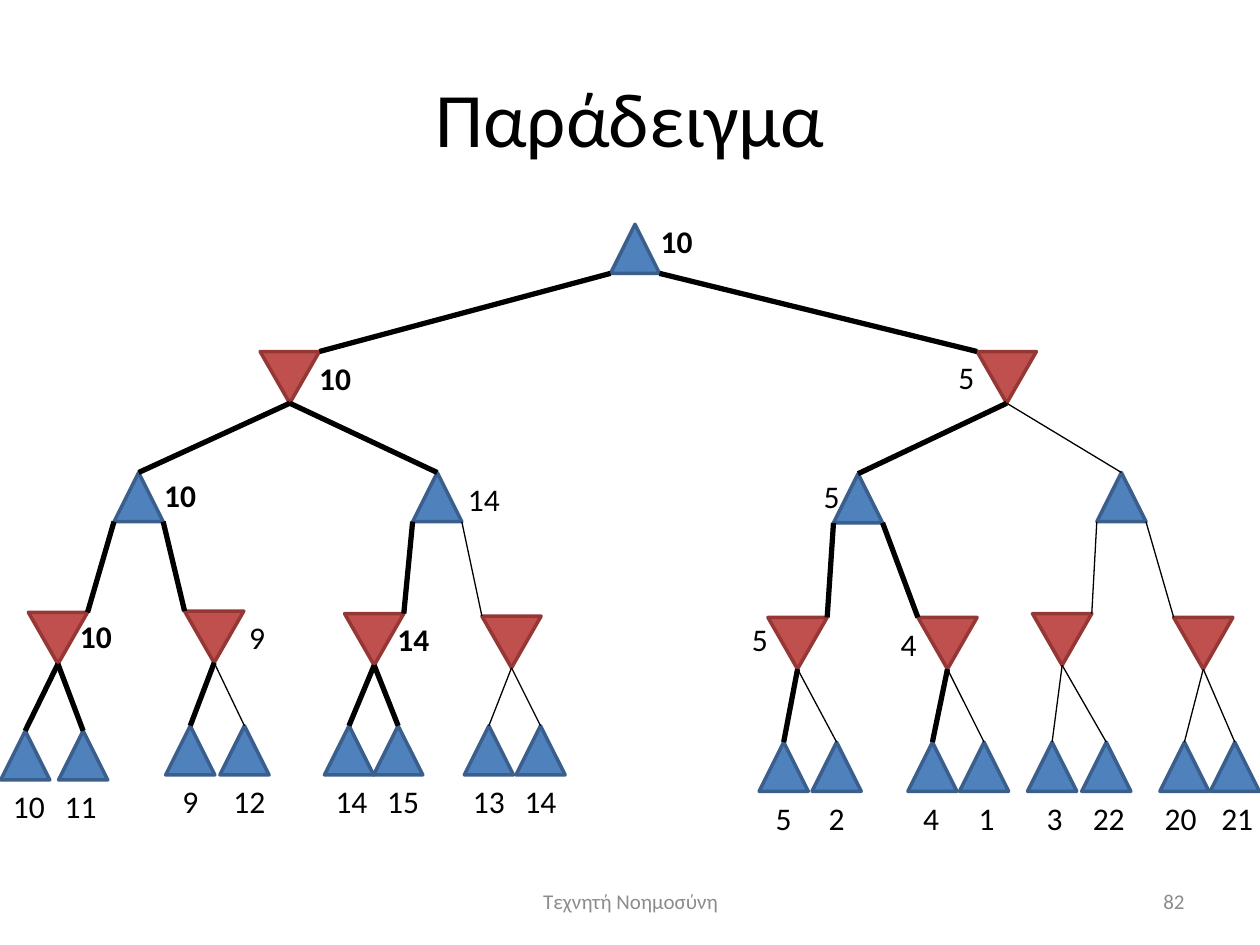
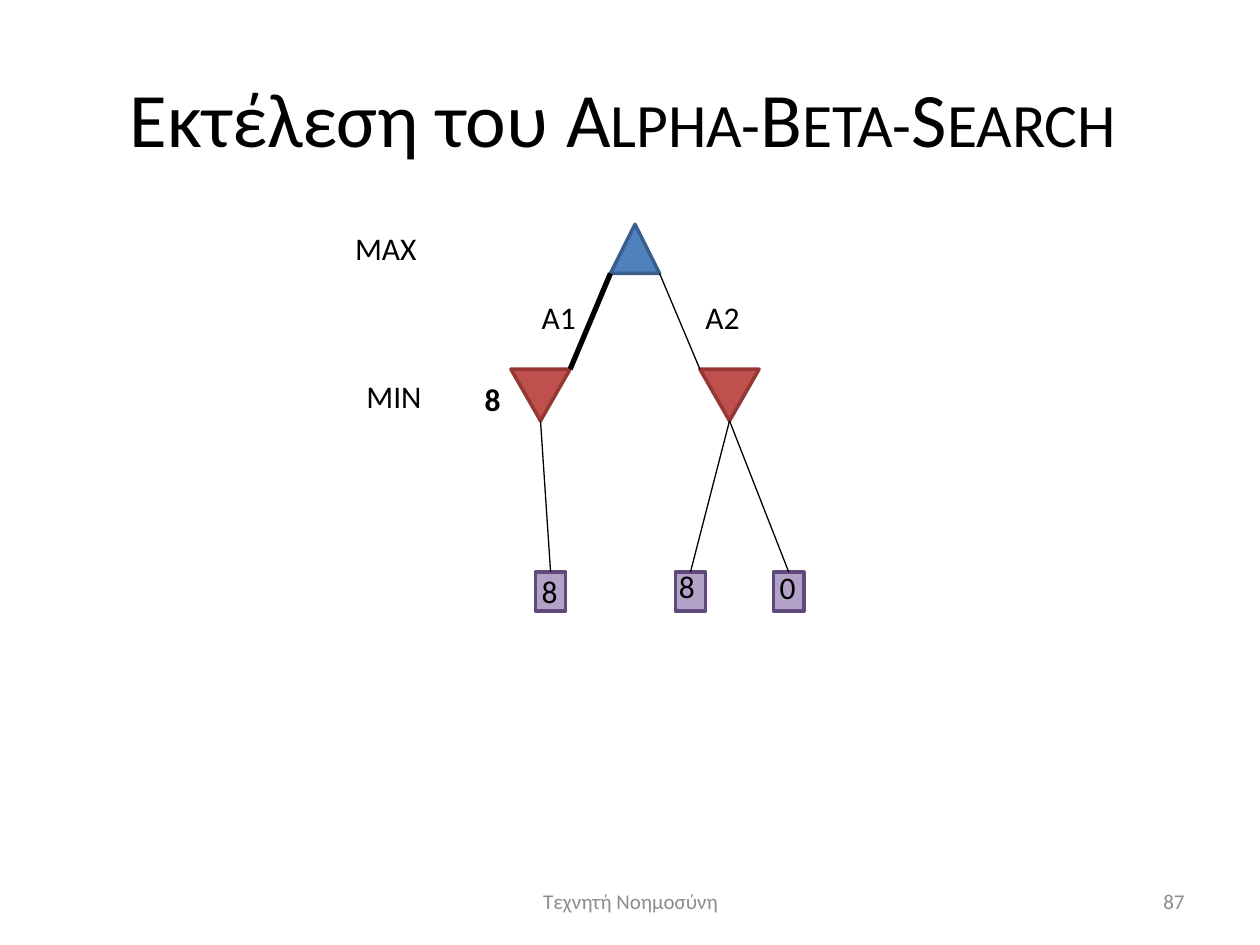
from dataclasses import dataclass

from lxml import etree
from pptx import Presentation
from pptx.dml.color import RGBColor
from pptx.enum.shapes import MSO_CONNECTOR, MSO_SHAPE
from pptx.enum.text import MSO_ANCHOR, MSO_AUTO_SIZE, PP_ALIGN
from pptx.oxml.ns import qn
from pptx.util import Inches, Pt

STRAIGHT = MSO_CONNECTOR.STRAIGHT
LEFT, CENTER, RIGHT = PP_ALIGN.LEFT, PP_ALIGN.CENTER, PP_ALIGN.RIGHT
MIDDLE = MSO_ANCHOR.MIDDLE
GROW = MSO_AUTO_SIZE.SHAPE_TO_FIT_TEXT

FONT = "Calibri"
COLORS = {
    "text": "000000", "footer": "8C8C8C",
    "max": "4F81BD", "max_line": "3A5F8C",
    "min": "C0504D", "min_line": "953735",
    "leaf": "B3A2C7", "leaf_line": "604A7B",
}
# kind: preset, width, height
NODE_FORMS = {
    "max": (MSO_SHAPE.ISOSCELES_TRIANGLE, 0.39, 0.39),
    "min": (MSO_SHAPE.FLOWCHART_MERGE, 0.47, 0.41),
    "leaf": (MSO_SHAPE.RECTANGLE, 0.24, 0.31),
}
THICK, THIN = 3, 0.75
LABEL_HEIGHT = 0.4
FOOTER_TEXT = "Τεχνητή Νοημοσύνη"
TREE_BOX = (0, 1.78)


@dataclass
class Node:
    """Tree node; x is its centre and y its top, measured from the tree box."""
    kind: str
    x: float
    y: float
    label: str = ""
    label_dx: float = 0
    label_dy: float = 0
    bold: bool = False
    label_width: float = 1.05
    branches: tuple = ()

    def walk(self):
        yield self
        for _, child in self.branches:
            yield from child.walk()


def rgb(name):
    return RGBColor.from_string(COLORS[name])


def style_text(text_frame, size, color, align, bold=None):
    for paragraph in text_frame.paragraphs:
        paragraph.alignment = align
        for run in paragraph.runs:
            run.font.name = FONT
            run.font.size = Pt(size)
            run.font.bold = bold
            run.font.color.rgb = rgb(color)


def add_text(slide, text, left, top, width, align=LEFT, size=18, color="text", bold=None):
    box = slide.shapes.add_textbox(Inches(left), Inches(top), Inches(width), Inches(LABEL_HEIGHT))
    text_frame = box.text_frame
    text_frame.word_wrap = True
    text_frame.text = text
    style_text(text_frame, size, color, align, bold)
    return text_frame


def add_titled_slide(presentation, title_parts, number):
    """Add a slide with title and footer; title_parts holds (text, small caps) pairs."""
    slide = presentation.slides.add_slide(presentation.slide_layouts[5])
    title = slide.shapes.title
    title.left, title.top, title.width, title.height = map(Inches, (0.5, 0.3, 9, 1.25))
    title.text_frame.vertical_anchor = MIDDLE
    paragraph = title.text_frame.paragraphs[0]
    for text, small_caps in title_parts:
        run = paragraph.add_run()
        run.text = text
        if small_caps:
            run.font._element.set("cap", "small")
    style_text(title.text_frame, 44, "text", CENTER)

    for text, left, width, align in ((FOOTER_TEXT, 3.42, 3.17, CENTER),
                                     (str(number), 7.17, 2.33, RIGHT)):
        footer = add_text(slide, text, left, 6.95, width, align, 12, "footer")
        footer.vertical_anchor = MIDDLE
    return slide


def add_node(slide, node, left, top):
    preset, width, height = NODE_FORMS[node.kind]
    shape = slide.shapes.add_shape(preset, Inches(left + node.x - width / 2),
                                   Inches(top + node.y), Inches(width), Inches(height))
    shape.shadow.inherit = False
    shape.fill.solid()
    shape.fill.fore_color.rgb = rgb(node.kind)
    shape.line.color.rgb = rgb(node.kind + "_line")
    shape.line.width = Pt(2)


def add_branch(slide, parent, child, weight, left, top):
    """Join MAX base corners to the near MIN corners, and MIN tips to child tops."""
    _, parent_width, parent_height = NODE_FORMS[parent.kind]
    start_x, end_x = parent.x, child.x
    if parent.kind == "max":
        side = 1 if child.x > parent.x else -1
        start_x += side * parent_width / 2
        end_x -= side * NODE_FORMS[child.kind][1] / 2
    line = slide.shapes.add_connector(
        STRAIGHT, Inches(left + start_x), Inches(top + parent.y + parent_height),
        Inches(left + end_x), Inches(top + child.y))
    line.line.color.rgb = rgb("text")
    line.line.width = Pt(weight)
    etree.SubElement(line._element.spPr, qn("a:effectLst"))


def add_tree(slide, root, box):
    left, top = box
    nodes = list(root.walk())
    for node in nodes:
        add_node(slide, node, left, top)
    for node in nodes:
        for weight, child in node.branches:
            add_branch(slide, node, child, weight, left, top)
    for node in nodes:
        if node.label:
            text_frame = add_text(
                slide, node.label, left + node.x + node.label_dx - node.label_width / 2,
                top + node.y + node.label_dy, node.label_width, CENTER, bold=node.bold)
            text_frame.auto_size = GROW


def min_with_leaves(x, y, leaf_y, leaves, **label):
    """MIN node over valued MAX leaves given as (weight, x, value, label shift)."""
    branches = tuple(
        (weight, Node("max", leaf_x, leaf_y, value, shift, 0.4, label_width=0.54))
        for weight, leaf_x, value, shift in leaves)
    return Node("min", x, y, branches=branches, **label)


def example_tree():
    far_left = Node("max", 1.1, 1.97, "10", 0.33, -0.02, True, branches=(
        (THICK, min_with_leaves(0.46, 3.08, 4.02, (
            (THICK, 0.2, "10", 0.03), (THICK, 0.66, "11", -0.02)),
            label="10", label_dx=0.3, label_dy=-0.01, bold=True)),
        (THICK, min_with_leaves(1.7, 3.07, 3.98, (
            (THICK, 1.51, "9", 0), (THIN, 1.94, "12", 0.04)),
            label="9", label_dx=0.34, label_dy=0.01))))
    middle_left = Node("max", 3.47, 1.97, "14", 0.37, 0.01, label_width=1.2, branches=(
        (THICK, min_with_leaves(2.97, 3.09, 3.98, (
            (THICK, 2.77, "14", 0.02), (THICK, 3.16, "15", 0.04)),
            label="14", label_dx=0.31, bold=True)),
        (THIN, min_with_leaves(4.06, 3.11, 3.98, (
            (THIN, 3.88, "13", 0), (THIN, 4.29, "14", 0))))))
    middle_right = Node("max", 6.81, 1.98, "5", -0.21, -0.02, branches=(
        (THICK, min_with_leaves(6.33, 3.12, 4.11, (
            (THICK, 6.22, "5", 0), (THIN, 6.64, "2", 0)),
            label="5", label_dx=-0.3, label_dy=-0.03)),
        (THICK, min_with_leaves(7.52, 3.12, 4.11, (
            (THICK, 7.4, "4", -0.01), (THIN, 7.81, "1", 0.02)),
            label="4", label_dx=-0.31, label_dy=0.01))))
    far_right = Node("max", 8.9, 1.97, branches=(
        (THIN, min_with_leaves(8.43, 3.09, 4.11, (
            (THIN, 8.35, "3", 0.02), (THIN, 8.78, "22", 0.02)))),
        (THIN, min_with_leaves(9.55, 3.12, 4.11, (
            (THIN, 9.4, "20", -0.03), (THIN, 9.8, "21", 0.02))))))
    left = Node("min", 2.3, 1.01, "10", 0.36, 0.01, True,
                branches=((THICK, far_left), (THICK, middle_left)))
    right = Node("min", 7.99, 1.01, "5", -0.32,
                 branches=((THICK, middle_right), (THIN, far_right)))
    return Node("max", 5.04, 0, "10", 0.33, -0.07, True, 1.33,
                ((THICK, left), (THICK, right)))


def search_tree():
    left_leaf, middle_leaf, right_leaf = (Node("leaf", x, 2.76) for x in (4.37, 5.48, 6.26))
    left = Node("min", 4.29, 1.15, "8", -0.38, 0.04, True, 0.57, ((THIN, left_leaf),))
    right = Node("min", 5.79, 1.15, branches=((THIN, middle_leaf), (THIN, right_leaf)))
    return Node("max", 5.04, 0, branches=((THICK, left), (THIN, right)))


def add_search_labels(slide, box):
    """Place leaf values, move names and player names around the search tree."""
    left, top = box
    for text, x, y, width in (
            ("0", 6.09, 2.68, 0.24), ("8", 5.29, 2.67, 0.24), ("8", 4.2, 2.71, 0.24),
            ("Α1", 4.2, 0.54, 0.47), ("Α2", 5.5, 0.54, 0.47),
            ("ΜΑΧ", 2.72, -0.01, 0.94), ("ΜΙΝ", 2.81, 1.16, 0.94)):
        add_text(slide, text, left + x, top + y, width).auto_size = GROW


def main():
    presentation = Presentation()
    presentation.slide_width, presentation.slide_height = Inches(10), Inches(7.5)

    example = add_titled_slide(presentation, [("Παράδειγμα", False)], 82)
    add_tree(example, example_tree(), TREE_BOX)

    search = add_titled_slide(
        presentation, [("Εκτέλεση του ", False), ("Alpha-Beta-Search ", True)], 87)
    add_tree(search, search_tree(), TREE_BOX)
    add_search_labels(search, TREE_BOX)

    presentation.save("out.pptx")


if __name__ == "__main__":
    main()
